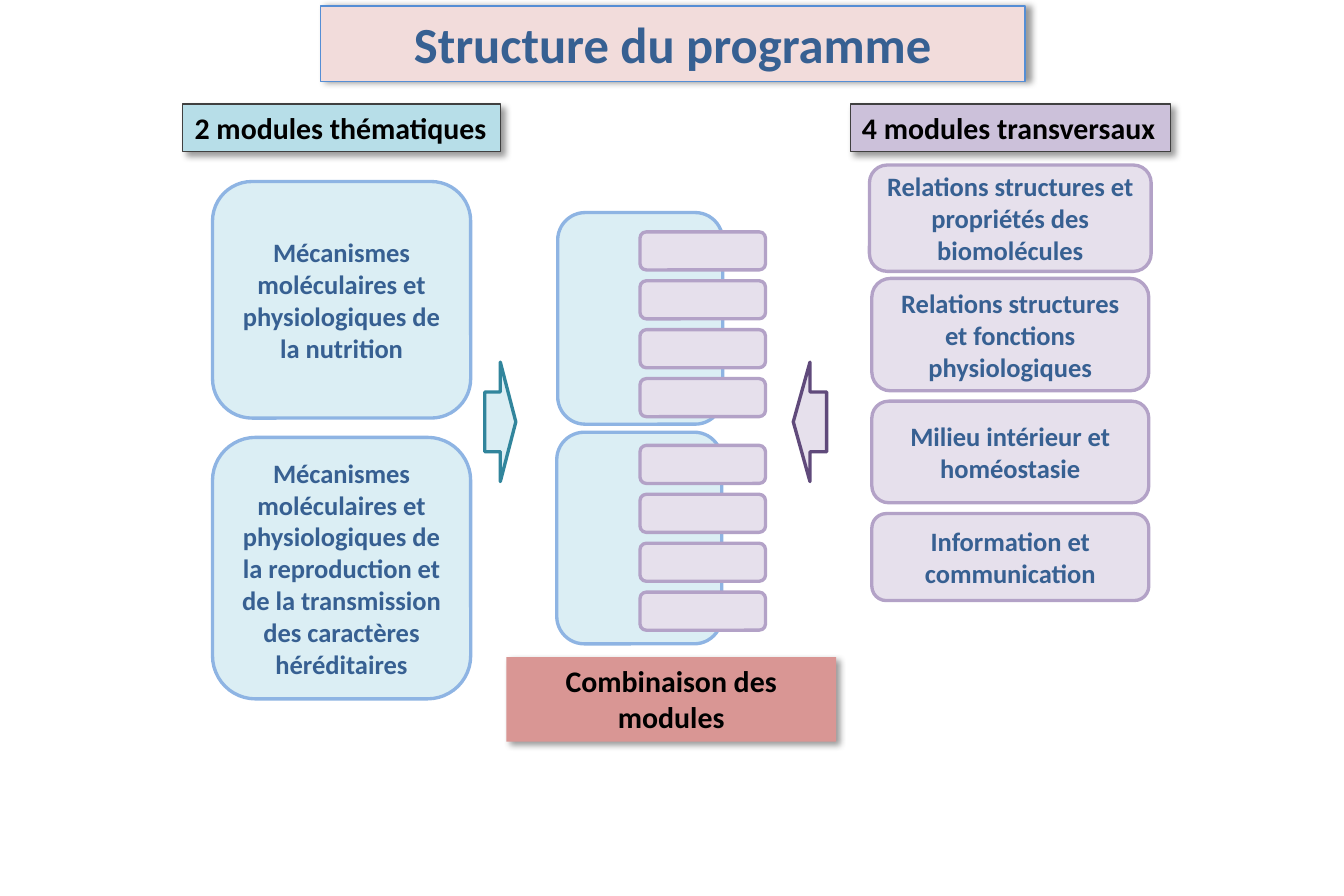
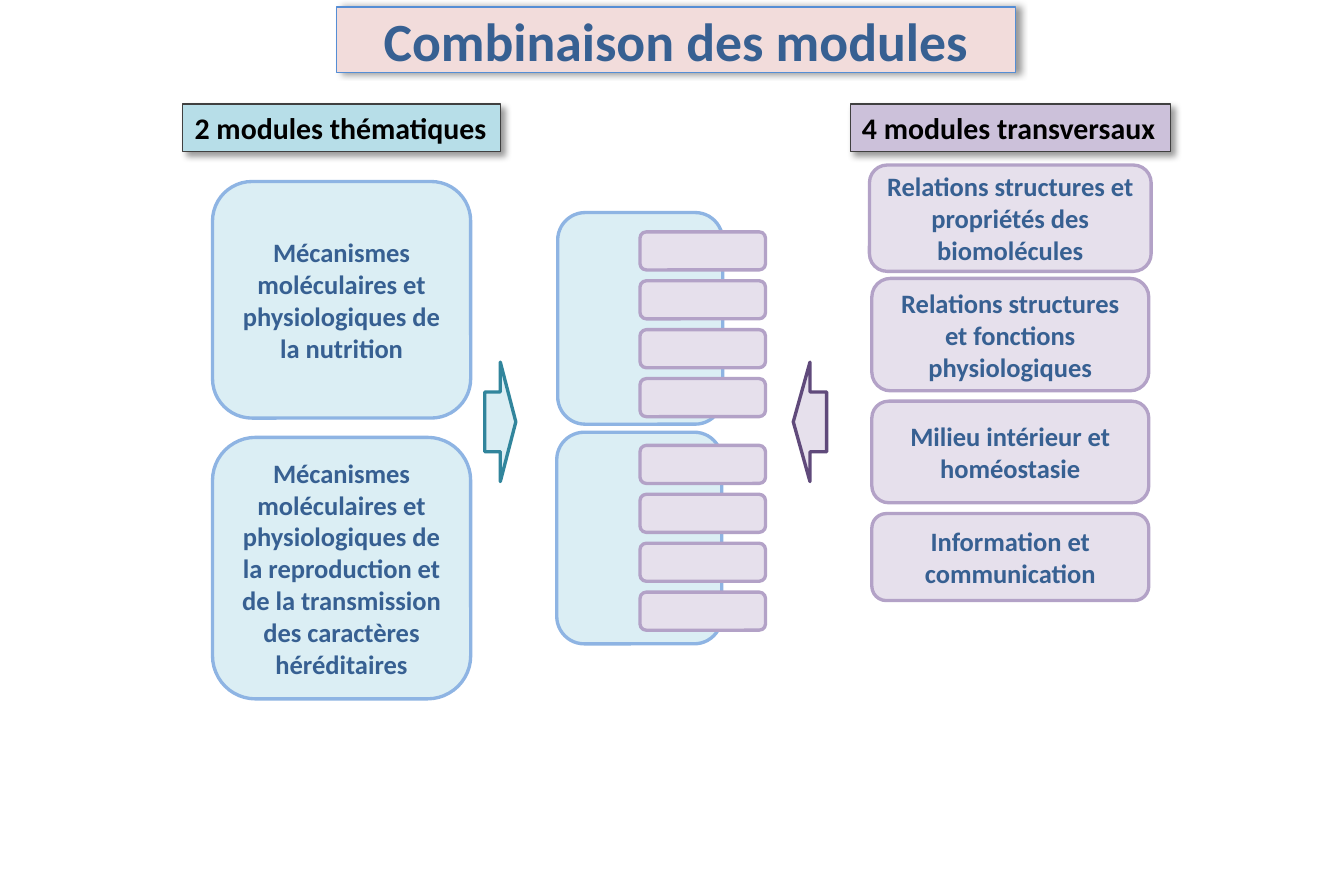
from dataclasses import dataclass

from lxml import etree
from pptx import Presentation
from pptx.dml.color import RGBColor
from pptx.enum.shapes import MSO_SHAPE
from pptx.enum.text import MSO_ANCHOR, MSO_AUTO_SIZE, PP_ALIGN
from pptx.oxml.ns import qn
from pptx.util import Cm, Pt

RECT = MSO_SHAPE.RECTANGLE
ROUND = MSO_SHAPE.ROUNDED_RECTANGLE
RIGHT_ARROW = MSO_SHAPE.RIGHT_ARROW
LEFT_ARROW = MSO_SHAPE.LEFT_ARROW
TOP, MIDDLE = MSO_ANCHOR.TOP, MSO_ANCHOR.MIDDLE
LEFT, CENTER = PP_ALIGN.LEFT, PP_ALIGN.CENTER
GROW = MSO_AUTO_SIZE.SHAPE_TO_FIT_TEXT


@dataclass(frozen=True)
class Theme:
    font: str = "Calibri"
    module_size: float = 16
    label_size: float = 18
    text: str = "376092"
    black: str = "000000"
    title_fill: str = "F2DCDB"
    title_line: str = "558ED5"
    label_line: str = "404040"
    thematic_label: str = "B7DEE8"
    thematic_fill: str = "DBEEF4"
    thematic_line: str = "8EB4E3"
    thematic_arrow: str = "31859C"
    transversal_label: str = "CCC1DA"
    transversal_fill: str = "E6E0EC"
    transversal_line: str = "B3A2C7"
    transversal_arrow: str = "604A7B"
    combination_fill: str = "D99694"
    thin: float = 0.75
    thick: float = 2


THEME = Theme()


def add_box(slide, preset, at, fill, line=None, width=THEME.thick, shadow_angle=None):
    """Add a filled shape; at is left, top, width, height in centimetres."""
    box = slide.shapes.add_shape(preset, *(Cm(length) for length in at))
    box.fill.solid()
    box.fill.fore_color.rgb = RGBColor.from_string(fill)
    if line:
        box.line.color.rgb = RGBColor.from_string(line)
        box.line.width = Pt(width)
    else:
        box.line.fill.background()
    box.shadow.inherit = False
    if shadow_angle is not None:
        effects = box._element.spPr.find(qn("a:effectLst"))
        shadow = etree.SubElement(
            effects, qn("a:outerShdw"), blurRad=str(Pt(4)), dist=str(Pt(3)),
            dir=str(shadow_angle * 60000), algn="tl", rotWithShape="0")
        color = etree.SubElement(shadow, qn("a:srgbClr"), val=THEME.black)
        etree.SubElement(color, qn("a:alpha"), val="40000")
    return box


def write(box, text, size=THEME.module_size, color=THEME.text, align=CENTER,
          anchor=MIDDLE, wrap=True, grow=False):
    frame = box.text_frame
    frame.word_wrap = wrap
    frame.vertical_anchor = anchor
    if grow:
        frame.auto_size = GROW
    paragraph = frame.paragraphs[0]
    paragraph.alignment = align
    run = paragraph.add_run()
    run.text = text
    run.font.name = THEME.font
    run.font.size = Pt(size)
    run.font.bold = True
    run.font.color.rgb = RGBColor.from_string(color)


# Content: places in centimetres
titles = [
    ("Structure du programme", (6.81, 0.13, 14.99, 1.6), 30.5),
    ("Combinaison des modules", (7.16, 0.15, 14.43, 1.4), 32.4),
]
labels = [
    ("2 modules thématiques", (3.89, 2.21, 6.76, 1.02), THEME.thematic_label),
    ("4 modules transversaux", (18.08, 2.21, 6.81, 1.02), THEME.transversal_label),
]
arrows = [
    (RIGHT_ARROW, (10.31, 7.7, 0.66, 2.54), THEME.thematic_fill, THEME.thematic_arrow),
    (LEFT_ARROW, (16.87, 7.7, 0.71, 2.54), THEME.transversal_fill, THEME.transversal_arrow),
]
thematic = (THEME.thematic_fill, THEME.thematic_line)
transversal = (THEME.transversal_fill, THEME.transversal_line)
modules = [
    ("Mécanismes moléculaires et physiologiques de la nutrition",
     (4.52, 3.86, 5.49, 5.03), thematic),
    ("Mécanismes moléculaires et physiologiques de la reproduction et de la "
     "transmission des caractères héréditaires",
     (4.52, 9.3, 5.49, 5.56), thematic),
    ("Relations structures et propriétés des biomolécules",
     (18.49, 3.51, 5.99, 2.26), transversal),
    ("Relations structures et fonctions physiologiques",
     (18.54, 5.92, 5.89, 2.39), transversal),
    ("Milieu intérieur et homéostasie", (18.54, 8.53, 5.89, 2.16), transversal),
    ("Information et communication", (18.54, 10.92, 5.89, 1.85), transversal),
]
# Left and top of each combined block, then top of its first bar
combinations = [(11.86, 4.52, 4.93), (11.84, 9.19, 9.47)]
BARS, BAR_PITCH = 4, 1.04

prs = Presentation()
prs.slide_width, prs.slide_height = Cm(28.58), Cm(19.05)
blank = prs.slide_layouts[6]

for title, title_at, title_size in titles:
    slide = prs.slides.add_slide(blank)

    # Title band
    band = add_box(slide, RECT, title_at, THEME.title_fill, THEME.title_line,
                   THEME.thin, shadow_angle=0)
    write(band, title, size=title_size)

    # Arrows towards the combination
    for preset, at, fill, line in arrows:
        add_box(slide, preset, at, fill, line)

    # Thematic and transversal modules
    for name, at, colors in modules:
        write(add_box(slide, ROUND, at, *colors), name)

    # Column labels
    for name, at, fill in labels:
        label = add_box(slide, RECT, at, fill, THEME.label_line, THEME.thin, shadow_angle=45)
        write(label, name, size=THEME.label_size, color=THEME.black, align=LEFT,
              anchor=TOP, wrap=False, grow=True)

    # Each thematic block crossed by the transversal bars
    for left, top, first_bar in combinations:
        add_box(slide, ROUND, (left, top, 3.51, 4.5), *thematic)
        for bar in range(BARS):
            add_box(slide, ROUND, (13.61, first_bar + bar * BAR_PITCH, 2.67, 0.81),
                    *transversal)

# Caption under the combination, first slide only
caption = add_box(prs.slides[0], RECT, (10.77, 13.97, 7.01, 1.8),
                  THEME.combination_fill, shadow_angle=45)
write(caption, "Combinaison des modules", size=THEME.label_size, color=THEME.black,
      anchor=TOP, grow=True)

prs.save("out.pptx")
